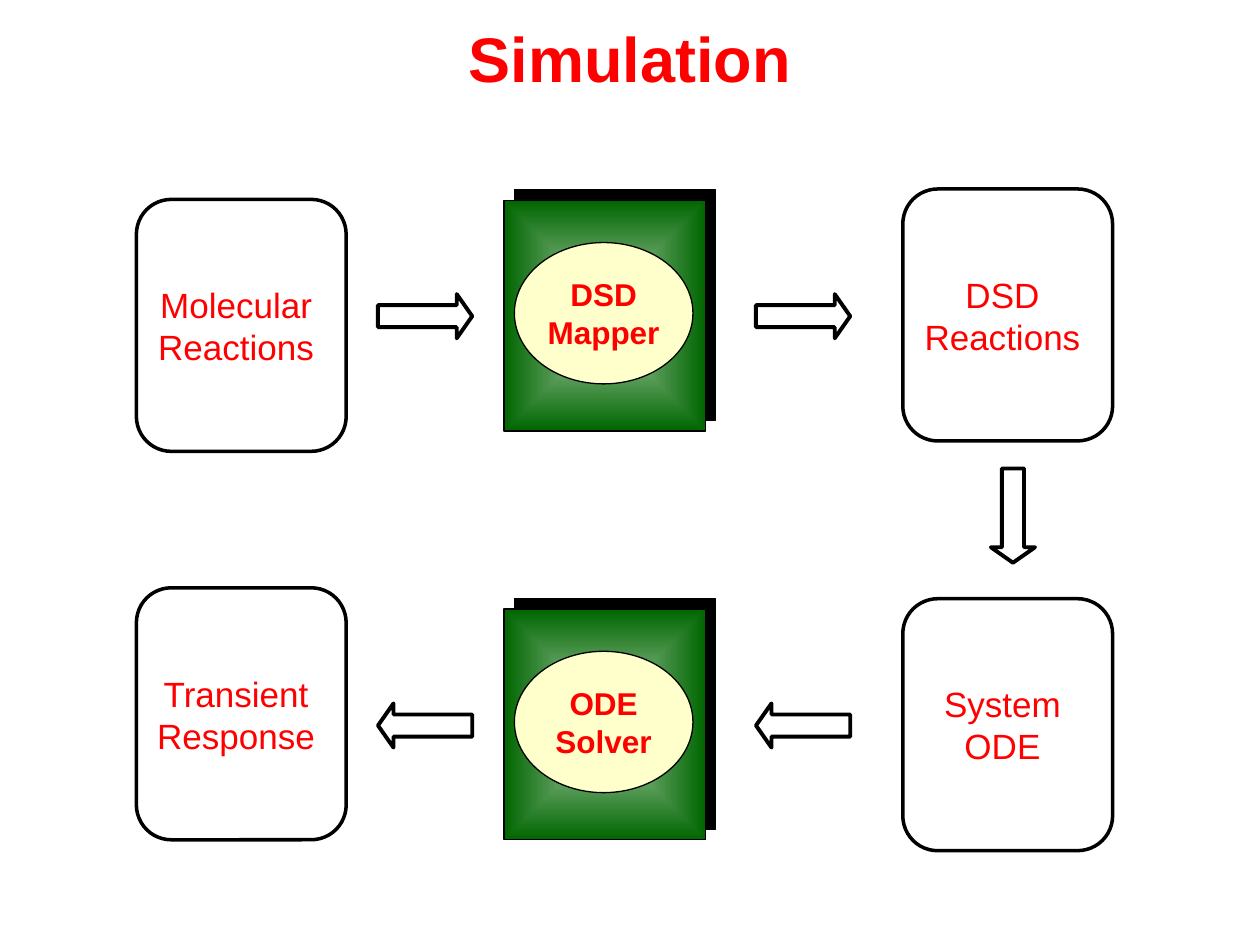
"""Build the Simulation flow slide."""
from dataclasses import dataclass

from lxml import etree
from pptx import Presentation
from pptx.dml.color import RGBColor
from pptx.enum.shapes import MSO_SHAPE
from pptx.enum.text import MSO_ANCHOR, PP_ALIGN
from pptx.oxml import parse_xml
from pptx.oxml.ns import nsdecls, qn
from pptx.util import Cm, Pt

ROUND = MSO_SHAPE.ROUNDED_RECTANGLE
RECT = MSO_SHAPE.RECTANGLE
OVAL = MSO_SHAPE.OVAL
ARROW = MSO_SHAPE.RIGHT_ARROW
MIDDLE = MSO_ANCHOR.MIDDLE
CENTER = PP_ALIGN.CENTER


@dataclass(frozen=True)
class Theme:
    """Hold the colours, font and type sizes."""
    font: str = "Arial"
    red: str = "FF0000"
    black: str = "000000"
    cream: str = "FFFFCC"
    pale: str = "A9CBA9"
    green: str = "006600"
    title: int = 36
    label: int = 20
    core: int = 18


THEME = Theme()


def rgb(code):
    """Turn a hex code into a colour."""
    return RGBColor.from_string(code)


def write(shape, text, size=THEME.label, bold=False, color=THEME.red, wrap=True):
    """Put centred lines of text into a shape."""
    frame = shape.text_frame
    frame.word_wrap = wrap
    frame.vertical_anchor = MIDDLE
    frame.margin_left = frame.margin_right = Cm(0.18)
    frame.margin_top = frame.margin_bottom = Cm(0.1)
    for index, line in enumerate(text.split("\n")):
        para = frame.paragraphs[0] if index == 0 else frame.add_paragraph()
        para.alignment = CENTER
        run = para.add_run()
        run.text = line
        font = run.font
        font.name, font.size, font.bold = THEME.font, Pt(size), bold
        font.color.rgb = rgb(color)


def label(slide, text, left, top, width, height, **style):
    """Add a text box."""
    box = slide.shapes.add_textbox(Cm(left), Cm(top), Cm(width), Cm(height))
    write(box, text, **style)


def draw(slide, kind, left, top, width, height, line, fill=None):
    """Add an outlined shape without a shadow."""
    shape = slide.shapes.add_shape(kind, Cm(left), Cm(top), Cm(width), Cm(height))
    shape.shadow.inherit = False
    shape.line.color.rgb = rgb(THEME.black)
    shape.line.width = Pt(line)
    if fill:
        shape.fill.solid()
        shape.fill.fore_color.rgb = rgb(fill)
    else:
        shape.fill.background()
    return shape


def state(slide, text, left, top):
    """Add a rounded box with its label."""
    draw(slide, ROUND, left, top, 4.23, 5.08, 2)
    label(slide, text, left + 0.21, top + 0.64, 3.6, 3.81)


def glow(shape):
    """Shade a shape from its centre to its edge."""
    shape.fill.gradient()
    for stop, code in zip(shape.fill.gradient_stops, (THEME.pale, THEME.green)):
        stop.color.rgb = rgb(code)
    stops = shape.element.spPr.find(qn("a:gradFill"))
    stops.replace(stops.find(qn("a:lin")), parse_xml(
        f'<a:path {nsdecls("a")} path="rect"><a:fillToRect l="50000" '
        't="50000" r="50000" b="50000"/></a:path>'))


def shade(shape):
    """Give a shape a hard shadow to the upper right."""
    effects = shape.element.spPr.find(qn("a:effectLst"))
    shadow = etree.SubElement(effects, qn("a:outerShdw"), blurRad="0",
                              dist=str(Pt(8.5)), dir="18900000",
                              algn="ctr", rotWithShape="0")
    etree.SubElement(shadow, qn("a:srgbClr"), val=THEME.black)


def engine(slide, text, left, top):
    """Add a green block with an oval core."""
    block = draw(slide, RECT, left, top, 4.06, 4.65, 0.75)
    glow(block)
    shade(block)
    core = draw(slide, OVAL, left + 0.21, top + 0.85, 3.6, 2.85, 0.75, THEME.cream)
    write(core, text, size=THEME.core, bold=True, wrap=False)


def arrow(slide, left, top, turn):
    """Add a block arrow turned by some degrees."""
    shape = draw(slide, ARROW, left, top, 1.9, 0.89, 2.25)
    shape.adjustments[1] = 0.35
    shape.rotation = turn


def main():
    """Build and save the slide."""
    deck = Presentation()
    deck.slide_width, deck.slide_height = Cm(25.4), Cm(19.05)
    slide = deck.slides.add_slide(deck.slide_layouts[6])
    label(slide, "Simulation", 0, 0.21, 25.4, 1.9, size=THEME.title, bold=True)

    west, east = 2.75, 18.2
    for text, left, top in (
        ("Molecular\nReactions", west, 4.02),
        ("DSD\nReactions", east, 3.81),
        ("System\nODE", east, 12.07),
        ("Transient\nResponse", west, 11.85),
    ):
        state(slide, text, left, top)
    for text, top in (("DSD\nMapper", 4.04), ("ODE\nSolver", 12.28)):
        engine(slide, text, 10.16, top)
    for top, turn in ((5.93, 0), (14.18, 180)):
        for left in (7.62, 15.24):
            arrow(slide, left, top, turn)
    arrow(slide, 19.47, 9.95, 90)
    deck.save("out.pptx")


if __name__ == "__main__":
    main()
